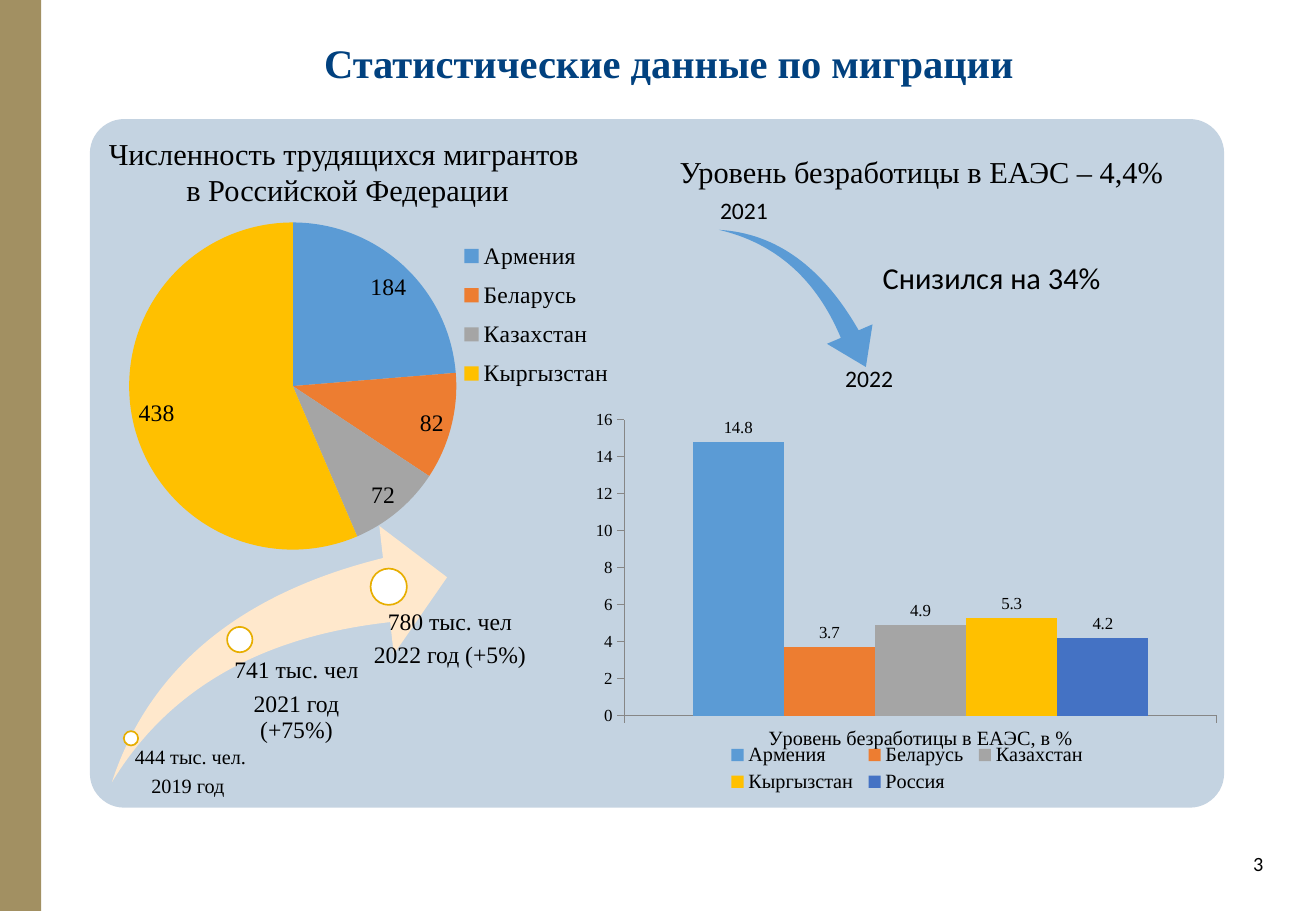
"""Builds a slide with migration and unemployment figures."""
from lxml.etree import SubElement
from pptx import Presentation
from pptx.chart.data import CategoryChartData
from pptx.dml.color import RGBColor
from pptx.enum.chart import XL_CHART_TYPE as KIND
from pptx.enum.chart import XL_LABEL_POSITION as SPOT
from pptx.enum.chart import XL_LEGEND_POSITION as SIDE
from pptx.enum.chart import XL_TICK_MARK as TICK
from pptx.enum.shapes import MSO_SHAPE as FORM
from pptx.enum.text import MSO_ANCHOR as ANCHOR
from pptx.enum.text import PP_ALIGN as ALIGN
from pptx.oxml.ns import qn
from pptx.util import Cm, Pt

SERIF, SANS = "Times New Roman", "Calibri"
BLACK, NAVY, BLUE = "000000", "01417F", "5B9BD5"
COLORS = [BLUE, "ED7D31", "A5A5A5", "FFC000", "4472C4"]
LANDS = ["Армения", "Беларусь", "Казахстан", "Кыргызстан", "Россия"]
STEPS = [
    ((2.59, 15.29, 0.3), (2.46, 15.62, 2.9, 2.08), 0.15, 12, ["444 тыс. чел.", "2019 год "]),
    ((4.75, 13.11, 0.53), (4.32, 13.77, 3.48, 3.94), 0.28, 14, ["741 тыс. чел", "2021 год (+75%)"]),
    ((7.75, 11.89, 0.76), (7.26, 12.75, 3.89, 3.66), 0.41, 14, ["780 тыс. чел", "2022 год (+5%)"]),
]


def color(code):
    """Return the colour for a hex string."""
    return RGBColor.from_string(code)


def place(box):
    """Turn centimetres into lengths."""
    return [Cm(side) for side in box]


def style(font, size, face=SERIF, code=BLACK, bold=False):
    """Set the look of a font."""
    font.size, font.name, font.bold = Pt(size), face, bold
    font.color.rgb = color(code)


def shape(slide, form, box, fill, line=None, adjust=()):
    """Add a filled preset shape."""
    item = slide.shapes.add_shape(form, *place(box))
    item.shadow.inherit = False
    item.fill.solid()
    item.fill.fore_color.rgb = color(fill)
    if line:
        item.line.color.rgb = color(line)
        item.line.width = Pt(1)
    else:
        item.line.fill.background()
    for spot, value in enumerate(adjust):
        item.adjustments[spot] = value
    return item


def fade(item, share):
    """Make a solid fill partly transparent."""
    tint = item.fill._xPr.find(qn("a:solidFill"))[0]
    SubElement(tint, qn("a:alpha")).set("val", str(share * 1000))


def text(slide, box, lines, size, face=SERIF, code=BLACK, bold=False, align=ALIGN.CENTER,
         anchor=ANCHOR.TOP, pads=(0.25, 0.13, 0.25, 0.13), lead=1, gap=0):
    """Add a text box with one paragraph per line."""
    frame = slide.shapes.add_textbox(*place(box)).text_frame
    frame.word_wrap, frame.vertical_anchor = True, anchor
    (frame.margin_left, frame.margin_top,
     frame.margin_right, frame.margin_bottom) = place(pads)
    frame.text = "\n".join(lines)
    for para in frame.paragraphs:
        para.alignment, para.line_spacing, para.space_after = align, lead, Pt(gap)
        style(para.font, size, face, code, bold)


def layout(part, spot, box, inner=False):
    """Give a chart part a fixed place, in shares of the chart."""
    for old in part.findall(qn("c:layout")):
        part.remove(old)
    node = SubElement(part, qn("c:layout"))
    part.insert(spot, node)
    manual = SubElement(node, qn("c:manualLayout"))
    rules = [("layoutTarget", "inner")] if inner else []
    rules += [("xMode", "edge"), ("yMode", "edge"), *zip("xywh", box)]
    for name, value in rules:
        SubElement(manual, qn(f"c:{name}")).set("val", str(value))


def graph(slide, kind, box, cats, series, side, size, plot, key):
    """Add a chart with a legend and fixed layout."""
    data = CategoryChartData()
    data.categories = cats
    for name, values in series:
        data.add_series(name, values)
    chart = slide.shapes.add_chart(kind, *place(box), data).chart
    chart.has_title = False
    style(chart.font, 10)
    chart.has_legend = True
    chart.legend.position = side
    chart.legend.include_in_layout = False
    style(chart.legend.font, size)
    layout(chart._chartSpace.chart.plotArea, 0, plot, True)
    layout(chart.legend._element, 1, key)
    return chart


def label(plot, size, spot):
    """Show the values on a plot."""
    plot.has_data_labels = True
    marks = plot.data_labels
    marks.show_value, marks.position = True, spot
    style(marks.font, size)


def paint(item, code):
    """Fill a series or a point."""
    item.format.fill.solid()
    item.format.fill.fore_color.rgb = color(code)


def bars(slide):
    """Add the chart of unemployment rates."""
    rates = [14.8, 3.7, 4.9, 5.3, 4.2]
    series = [(land, [rate]) for land, rate in zip(LANDS, rates)]
    chart = graph(slide, KIND.COLUMN_CLUSTERED, (12.09, 8.53, 13.77, 8.15),
                  ["Уровень безработицы в ЕАЭС, в %"], series, SIDE.BOTTOM, 12,
                  (0.07, 0.03, 0.9, 0.76), (0.22, 0.85, 0.56, 0.15))
    plot = chart.plots[0]
    plot.gap_width, plot.overlap, plot.vary_by_categories = 150, 0, False
    label(plot, 10, SPOT.OUTSIDE_END)
    for item, code in zip(plot.series, COLORS):
        paint(item, code)
    for axis, size in ((chart.category_axis, 12), (chart.value_axis, 10)):
        axis.has_major_gridlines = False
        axis.major_tick_mark, axis.minor_tick_mark = TICK.OUTSIDE, TICK.NONE
        axis.format.line.color.rgb = color("868686")
        style(axis.tick_labels.font, size)
    axis.minimum_scale, axis.maximum_scale, axis.major_unit = 0, 16, 2


def pie(slide):
    """Add the chart of migrant numbers."""
    chart = graph(slide, KIND.PIE, (0.89, 4.09, 13.77, 8.05), LANDS[:4],
                  [("Series 1", [184, 82, 72, 438])], SIDE.RIGHT, 14,
                  (0.13, 0.07, 0.5, 0.85), (0.62, 0.09, 0.26, 0.44))
    plot = chart.plots[0]
    label(plot, 14, SPOT.BEST_FIT)
    for spot, code in enumerate(COLORS[:4]):
        paint(plot.series[0].points[spot], code)


def growth(slide):
    """Add the rising arrow with its three steps."""
    shape(slide, FORM.SWOOSH_ARROW, (2.34, 11, 7.01, 5.36), "FFE8CC", adjust=(0.25, 0.25))
    for (left, top, size), box, pad, points, lines in STEPS:
        shape(slide, FORM.OVAL, (left, top, size, size), "FFFFFF", "E7AE00")
        text(slide, box, lines, points, pads=(pad, 0, 0, 0), lead=0.9, gap=points * 0.35)


def decline(slide):
    """Add the falling arrow between two years."""
    arrow = shape(slide, FORM.SWOOSH_ARROW, (14.94, 4.93, 3.63, 2.51), BLUE,
                  adjust=(0.16, 0.31))
    arrow.rotation = 73.3
    for year, box, anchor in (("2021", (14.71, 4.09, 1.7, 0.66), ANCHOR.BOTTOM),
                              ("2022", (17.02, 7.62, 2.31, 0.66), ANCHOR.TOP)):
        text(slide, box, [year], 14, SANS, anchor=anchor, pads=[0.05] * 4, lead=0.9)
    text(slide, (18.21, 5.28, 6.5, 1.02), ["Снизился на 34%"], 18, SANS, align=ALIGN.LEFT)


def main():
    """Build and save the slide."""
    deck = Presentation()
    deck.slide_width, deck.slide_height = Cm(27.52), Cm(19.05)
    slide = deck.slides.add_slide(deck.slide_layouts[6])
    shape(slide, FORM.RECTANGLE, (0, 0, 0.86, 19.05), "A29062")
    panel = shape(slide, FORM.ROUNDED_RECTANGLE, (1.88, 2.49, 23.72, 14.4), NAVY, adjust=[0.05])
    fade(panel, 23)
    text(slide, (6.53, 0.61, 16.76, 1.5), ["Статистические данные по миграции"], 24,
         code=NAVY, bold=True, align=ALIGN.LEFT, anchor=ANCHOR.MIDDLE, lead=0.9)
    text(slide, (20.47, 17.55, 6.2, 1.02), ["3"], 12, SANS,
         align=ALIGN.RIGHT, anchor=ANCHOR.MIDDLE)
    growth(slide)
    text(slide, (13.34, 3.07, 11.86, 1.02), ["Уровень безработицы в ЕАЭС – 4,4%"], 18)
    decline(slide)
    text(slide, (1.63, 2.69, 11.28, 1.8),
         ["Численность трудящихся мигрантов \vв Российской Федерации"], 18)
    bars(slide)
    pie(slide)
    deck.save("out.pptx")


if __name__ == "__main__":
    main()
